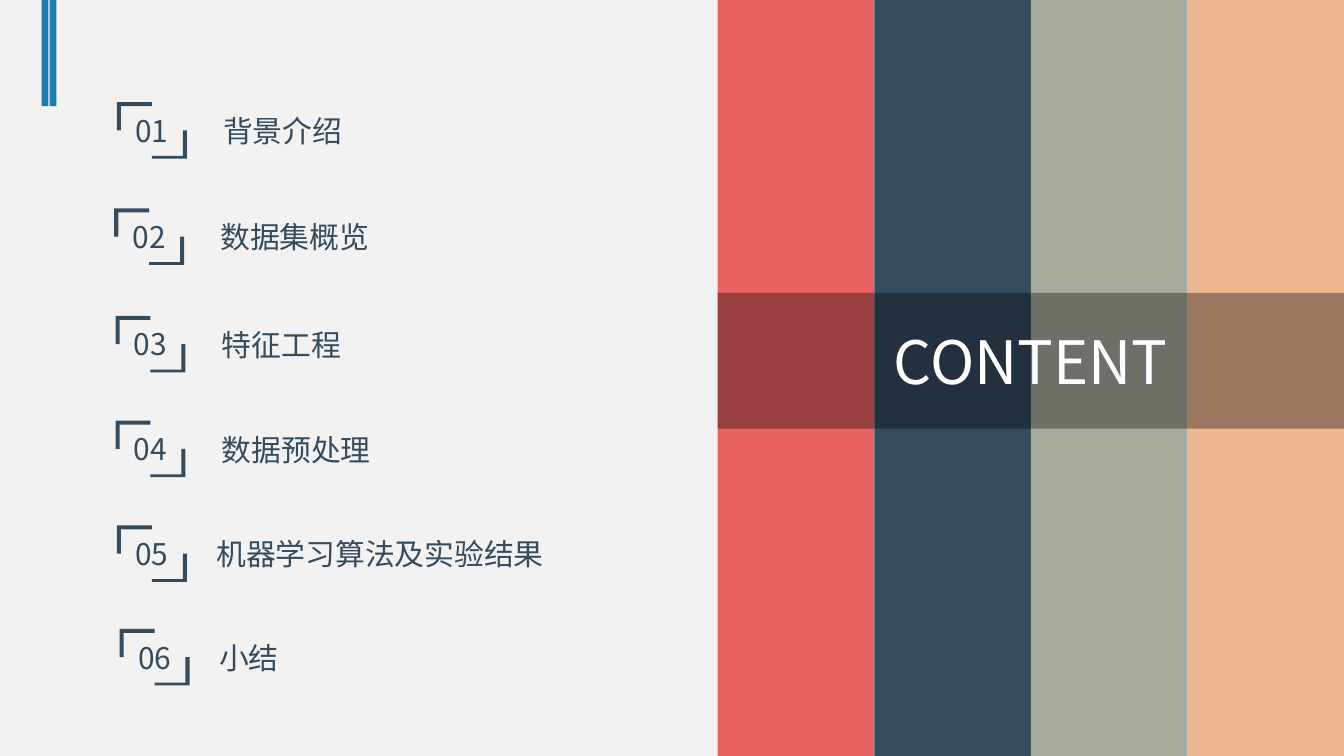
from dataclasses import dataclass

from lxml import etree
from pptx import Presentation
from pptx import util as u
from pptx.dml.color import RGBColor
from pptx.enum import shapes, text
from pptx.oxml.ns import qn

COLORS = {
    "paper": "F2F2F2",
    "accent": "1A7BAE",
    "red": "E86262",
    "navy": "354B5E",
    "sage": "A7AA9D",
    "peach": "EBB690",
    "black": "000000",
    "white": "FFFFFF",
}
FONT = "Noto Sans CJK SC"

WIDTH = 10
HEIGHT = WIDTH * 9 / 16
PANEL_LEFT = 5.34
STRIPES = ("red", "navy", "sage", "peach")
STRIPE_WIDTH = (WIDTH - PANEL_LEFT) / len(STRIPES)

# Bracket marker, in hundredths of an inch
MARK_WIDTH, MARK_HEIGHT, MARK_LINE = 52, 42.5, 2.8


@dataclass
class Entry:
    title: str
    left: float
    top: float
    indent: float = 0.15


ENTRIES = (
    Entry("背景介绍", 0.87, 0.76),
    Entry("数据集概览", 0.85, 1.55),
    Entry("特征工程", 0.86, 2.35),
    Entry("数据预处理", 0.86, 3.13),
    Entry("机器学习算法及实验结果", 0.87, 3.91, 0.1),
    Entry("小结", 0.89, 4.68, 0.1),
)


def paint(shape, color: str) -> None:
    shape.shadow.inherit = False
    shape.fill.solid()
    shape.fill.fore_color.rgb = RGBColor.from_string(COLORS[color])
    shape.line.fill.background()


def add_bar(page, left: float, top: float, width: float, height: float, color: str):
    bar = page.shapes.add_shape(
        shapes.MSO_SHAPE.RECTANGLE,
        u.Inches(left), u.Inches(top), u.Inches(width), u.Inches(height),
    )
    paint(bar, color)
    return bar


def write(shape, words: str, size: float, color: str, centred: bool = False) -> None:
    frame = shape.text_frame
    frame.text = words
    frame.word_wrap = True
    para = frame.paragraphs[0]
    para.alignment = text.PP_ALIGN.CENTER if centred else text.PP_ALIGN.LEFT
    if centred:
        frame.vertical_anchor = text.MSO_ANCHOR.MIDDLE
        frame.margin_left = frame.margin_right = 0
    span = para.runs[0]
    span.font.size = u.Pt(size)
    span.font.name = FONT
    span.font.color.rgb = RGBColor.from_string(COLORS[color])
    east_asian = etree.SubElement(span.font._element, qn("a:ea"))
    east_asian.set("typeface", FONT)


def add_marker(page, entry: Entry, number: str) -> None:
    """Draw two opposite corner brackets with the number between them."""
    w, h, t = MARK_WIDTH, MARK_HEIGHT, MARK_LINE
    corner = [(0, 0), (w / 2, 0), (w / 2, t), (t, t), (t, h / 2), (0, h / 2)]
    opposite = [(w - x, h - y) for x, y in corner]
    builder = page.shapes.build_freeform(*corner[0], scale=u.Inches(0.01))
    builder.add_line_segments(corner[1:], close=True)
    builder.move_to(*opposite[0])
    builder.add_line_segments(opposite[1:], close=True)
    marker = builder.convert_to_shape(u.Inches(entry.left), u.Inches(entry.top))
    paint(marker, "navy")
    write(marker, number, 16, "navy", centred=True)


def add_title(page, entry: Entry) -> None:
    box = page.shapes.add_textbox(
        u.Inches(entry.left + 0.54), u.Inches(entry.top + 0.03),
        u.Inches(3.98), u.Inches(0.37),
    )
    write(box, entry.title, 16, "navy")
    box.text_frame.margin_left = u.Inches(0.1 + entry.indent)


def main() -> None:
    deck = Presentation()
    deck.slide_width, deck.slide_height = u.Inches(WIDTH), u.Inches(HEIGHT)
    page = deck.slides.add_slide(deck.slide_layouts[6])
    page.background.fill.solid()
    page.background.fill.fore_color.rgb = RGBColor.from_string(COLORS["paper"])

    for left in (0.31, 0.37):
        add_bar(page, left, 0, 0.05, 0.79, "accent")

    for number, entry in enumerate(ENTRIES, start=1):
        add_title(page, entry)
        add_marker(page, entry, f"{number:02}")

    for column, color in enumerate(STRIPES):
        left = PANEL_LEFT + column * STRIPE_WIDTH
        add_bar(page, left, 0, STRIPE_WIDTH, HEIGHT, color)

    banner = add_bar(page, PANEL_LEFT, 2.18, WIDTH - PANEL_LEFT, 1.01, "black")
    shade = banner.fill._xPr.find(qn("a:solidFill"))[0]
    etree.SubElement(shade, qn("a:alpha")).set("val", "34000")
    write(banner, "CONTENT", 32, "white", centred=True)

    deck.save("out.pptx")


if __name__ == "__main__":
    main()
